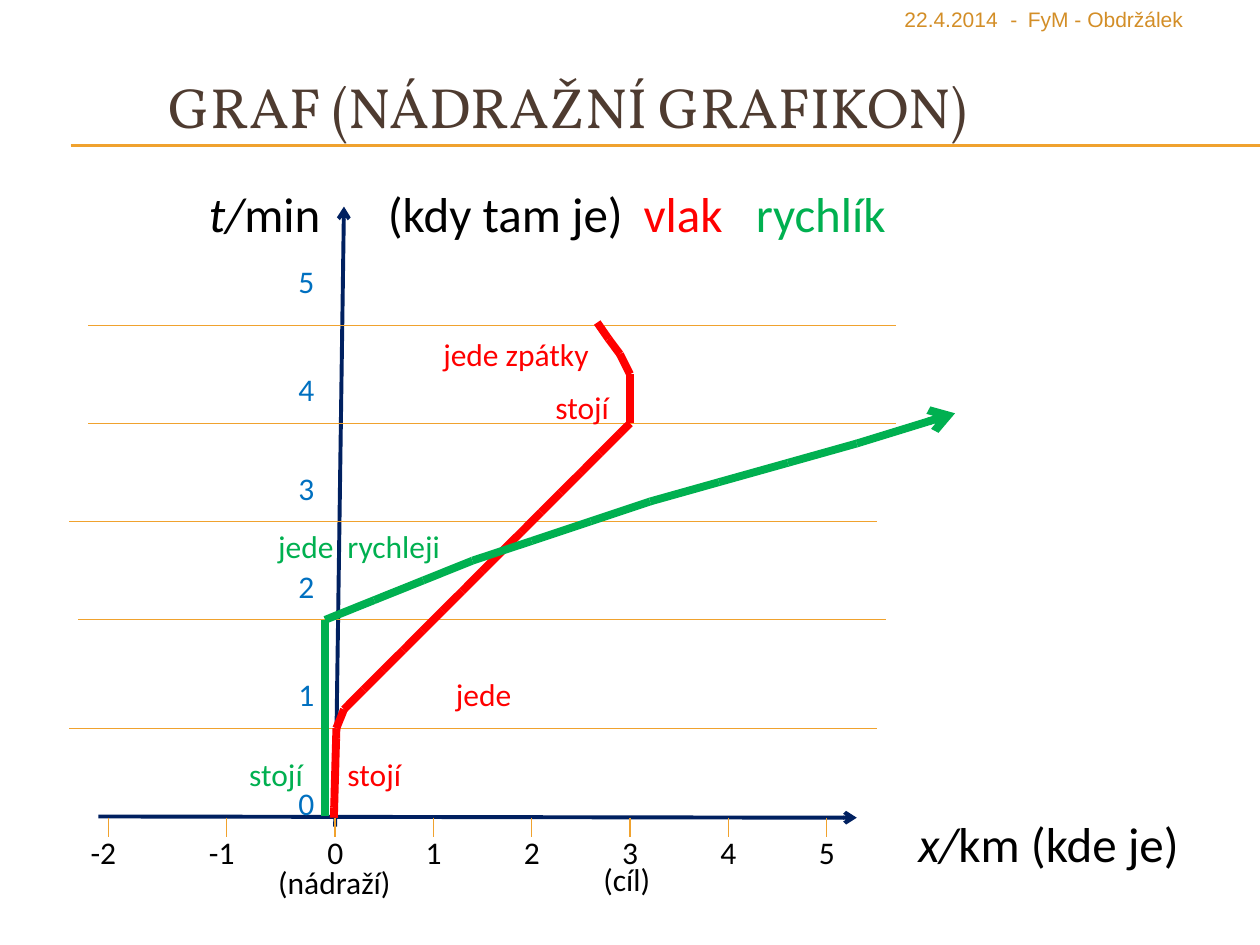
import dataclasses
import itertools

import pptx
import pptx.dml.color
import pptx.enum.shapes
import pptx.enum.text
import pptx.oxml
import pptx.oxml.ns
import pptx.util
from pptx.util import Inches


@dataclasses.dataclass(frozen=True)
class Theme:
    """Colours, fonts, type sizes and line widths of the slide."""
    ink: str = "000000"
    title: str = "4E3B30"
    rule: str = "F0A22E"
    date: str = "D38E27"
    axis: str = "002060"
    minute: str = "0070C0"
    train: str = "FF0000"
    express: str = "00B050"
    heading_font: str = "Vollkorn"
    body_font: str = "Calibri"
    date_font: str = "Arial"
    heading_size: float = 32.4
    axis_size: float = 28
    label_size: float = 18
    date_size: float = 12
    route_width: float = 4.5
    axis_width: float = 2.25
    tick_width: float = 0.79
    rule_width: float = 0.75
    grid_width: float = 0.5


@dataclasses.dataclass(frozen=True)
class Box:
    """A region in inches."""
    left: float
    top: float
    width: float
    height: float

    def inner(self, left, top, width, height):
        """Return a box placed relative to this one."""
        return Box(self.left + left, self.top + top, width, height)


THEME = Theme()


def colour(value):
    """Turn a hex string into a colour."""
    return pptx.dml.color.RGBColor.from_string(value)


def style_span(span, font, size, value, italic=False):
    """Format one run."""
    span.font.name = font
    span.font.size = pptx.util.Pt(size)
    span.font.color.rgb = colour(value)
    span.font.italic = italic


def place(shape, box):
    """Move and size a shape to a box."""
    shape.left, shape.top = Inches(box.left), Inches(box.top)
    shape.width, shape.height = Inches(box.width), Inches(box.height)


def add_text(page, box, spans, size=THEME.label_size, font=THEME.body_font,
             wrap=False, stops=()):
    """Add a text box of (text, colour, italic) spans with optional tab stops."""
    shape = page.shapes.add_textbox(0, 0, 0, 0)
    place(shape, box)
    shape.text_frame.word_wrap = wrap
    para = shape.text_frame.paragraphs[0]
    para.alignment = pptx.enum.text.PP_ALIGN.LEFT
    for text, value, italic in spans:
        span = para.add_run()
        span.text = text
        style_span(span, font, size, value, italic)
    if stops:
        settings = shape.element.find(".//" + pptx.oxml.ns.qn("a:pPr"))
        marks = "".join(f'<a:tab pos="{Inches(stop)}" algn="l"/>' for stop in stops)
        settings.append(pptx.oxml.parse_xml(
            f'<a:tabLst {pptx.oxml.ns.nsdecls("a")}>{marks}</a:tabLst>'))


def add_line(page, box, start, end, value, width, arrow=False):
    """Draw a straight line between two points of a box."""
    line = page.shapes.add_connector(
        pptx.enum.shapes.MSO_CONNECTOR.STRAIGHT,
        Inches(box.left + start[0]), Inches(box.top + start[1]),
        Inches(box.left + end[0]), Inches(box.top + end[1]))
    line.line.color.rgb = colour(value)
    line.line.width = pptx.util.Pt(width)
    namespace = pptx.oxml.ns.nsdecls("a")
    properties = line.element.spPr
    if arrow:
        properties.find(pptx.oxml.ns.qn("a:ln")).append(
            pptx.oxml.parse_xml(f'<a:tailEnd {namespace} type="arrow"/>'))
    properties.append(pptx.oxml.parse_xml(f"<a:effectLst {namespace}/>"))


def add_header(page, box):
    """Place the date, the title and the double rule below it."""
    for drop in (1.15, 1.16):
        add_line(page, box, (0.56, drop), (box.width, drop), THEME.rule, THEME.rule_width)
    title = page.shapes.title
    place(title, box.inner(1.24, 0.52, 8.5, 0.55))
    frame = title.text_frame
    frame.text = "GRAF (NÁDRAŽNÍ GRAFIKON)"
    frame.word_wrap = True
    frame.auto_size = pptx.enum.text.MSO_AUTO_SIZE.NONE
    frame.vertical_anchor = pptx.enum.text.MSO_ANCHOR.TOP
    para = frame.paragraphs[0]
    para.alignment = pptx.enum.text.PP_ALIGN.LEFT
    style_span(para.runs[0], THEME.heading_font, THEME.heading_size, THEME.title)
    add_text(page, box.inner(7.08, 0, 2.88, 0.32),
             [("22.4.2014\t-\tFyM - Obdržálek", THEME.date, False)],
             THEME.date_size, THEME.date_font, True, (0.84, 0.98))


def add_axes(page, box):
    """Draw both axes with their captions, ticks, grid lines and numbers."""
    add_line(page, box, (0.28, 5.08), (6.3, 5.09), THEME.axis, THEME.axis_width, True)
    add_line(page, box, (2.16, 5.16), (2.23, 0.24), THEME.axis, THEME.axis_width, True)
    add_text(page, box.inner(6.69, 5.01, 2.5, 0.57),
             [("x/", THEME.ink, True), ("km (kde je)", THEME.ink, False)],
             THEME.axis_size)
    add_text(page, box.inner(1.06, 0.01, 6.02, 0.57),
             [("t/", THEME.ink, True), ("min\t(kdy tam je)\t", THEME.ink, False),
              ("vlak\t", THEME.train, False), ("rychlík", THEME.express, False)],
             THEME.axis_size, wrap=True, stops=(1.42, 3.45, 4.34))

    ticks = [0.36, 1.3] + [2.16 + 0.78 * step for step in range(6)]
    for number, across in enumerate(ticks, start=-2):
        add_line(page, box, (across, 5.09), (across, 5.24), THEME.rule, THEME.tick_width)
        shift, width = (0.24, 0.41) if number < 0 else (0.16, 0.33)
        add_text(page, box.inner(across - shift, 5.16, width, 0.4),
                 [(str(number), THEME.ink, False)])

    for left, drop in ((0.05, 4.38), (0.12, 3.52), (0.05, 2.74), (0.2, 1.96), (0.2, 1.18)):
        add_line(page, box, (left, drop), (left + 6.41, drop), THEME.rule, THEME.grid_width)
    for number, drop in enumerate((4.77, 3.91, 3.05, 2.27, 1.49, 0.63)):
        add_text(page, box.inner(1.77, drop, 0.33, 0.4),
                 [(str(number), THEME.minute, False)])


def add_route(page, box, start, legs, value, arrow=False):
    """Draw a journey of legs, each (end point, number of equal steps)."""
    points = [start]
    for end, steps in legs:
        origin = points[-1]
        points += [tuple(a + (b - a) * step / steps for a, b in zip(origin, end))
                   for step in range(1, steps + 1)]
    pairs = list(itertools.pairwise(points))
    for index, (head, tail) in enumerate(pairs, start=1):
        add_line(page, box, head, tail, value, THEME.route_width,
                 arrow and index == len(pairs))


def add_journeys(page, box):
    """Draw the two trains and the remarks beside them."""
    add_route(page, box, (2.15, 5.09),
              [((2.17, 4.38), 9), ((2.23, 4.23), 1), ((4.42, 2.04), 14),
               ((4.5, 1.96), 1), ((4.5, 1.72), 1), ((4.5, 1.57), 1),
               ((4.42, 1.41), 1), ((4.33, 1.29), 1), ((4.24, 1.16), 1)],
              THEME.train)
    add_route(page, box, (2.08, 5.08),
              [((2.08, 4.38), 9), ((2.08, 3.6), 5), ((2.08, 3.52), 1),
               ((3.25, 3.05), 3), ((4.66, 2.58), 3), ((6.3, 2.12), 3),
               ((7.08, 1.88), 1)],
              THEME.express, True)
    remarks = (("(nádraží)", 1.61, 5.4, 1.1, THEME.ink),
               ("(cíl)", 4.19, 5.38, 0.58, THEME.ink),
               ("stojí", 2.16, 4.54, 0.63, THEME.train),
               ("jede", 3.02, 3.91, 0.65, THEME.train),
               ("stojí", 3.81, 1.63, 0.63, THEME.train),
               ("jede zpátky", 2.92, 1.21, 1.37, THEME.train),
               ("stojí", 1.38, 4.54, 0.63, THEME.express))
    for text, left, top, width, value in remarks:
        add_text(page, box.inner(left, top, width, 0.4), [(text, value, False)])
    add_text(page, box.inner(1.61, 2.73, 1.56, 0.4),
             [("jede\trychleji", THEME.express, False)], wrap=True, stops=(0.55,))


def main():
    """Build and save the deck."""
    deck = pptx.Presentation()
    deck.slide_width, deck.slide_height = Inches(10), Inches(7.5)
    page = deck.slides.add_slide(deck.slide_layouts.get_by_name("Title Only"))
    plot = Box(0.5, 1.4, 9.1, 5.8)
    add_header(page, Box(0, 0, 10, 1.2))
    add_axes(page, plot)
    add_journeys(page, plot)
    deck.save("out.pptx")


if __name__ == "__main__":
    main()
